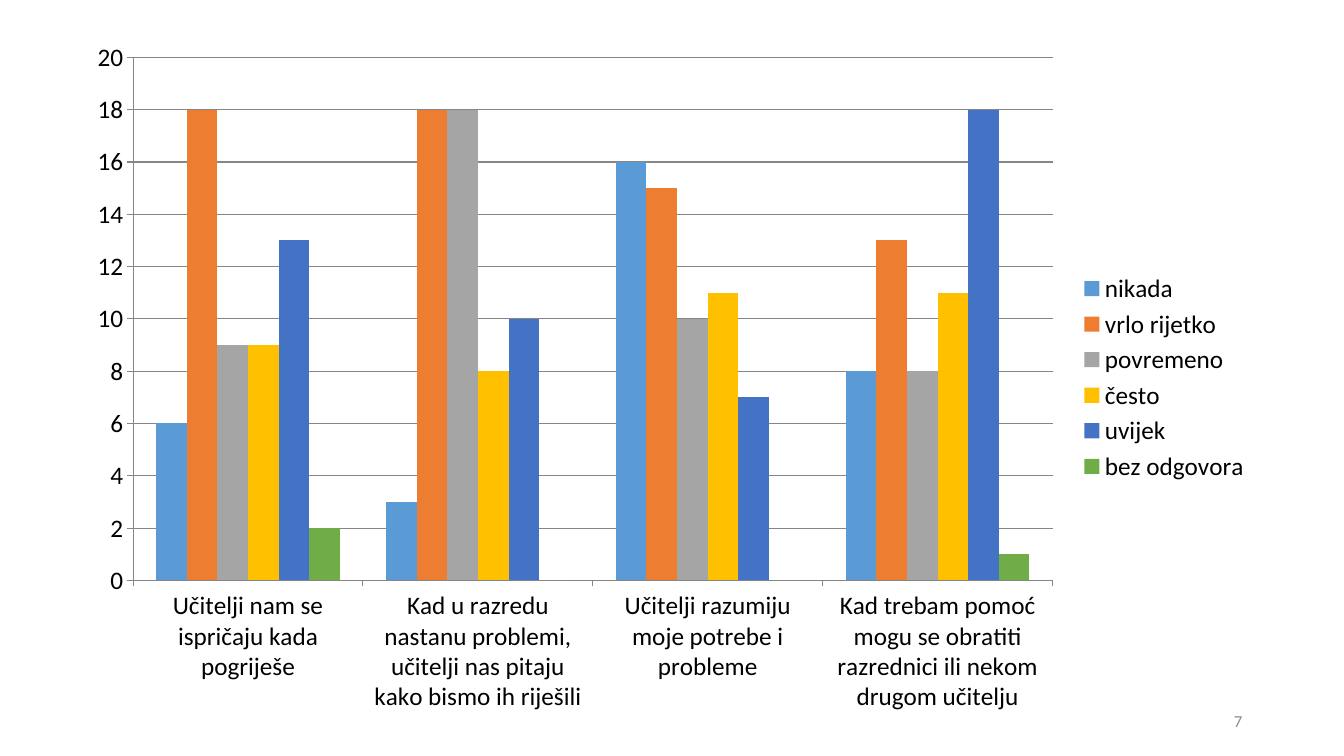
"""Build a slide with a clustered column chart of pupils' answers about their teachers."""
import pptx
import pptx.chart.data
import pptx.dml.color
import pptx.enum.chart
import pptx.enum.text
import pptx.oxml
import pptx.oxml.ns
import pptx.util

QUESTIONS = [
    "Učitelji nam se ispričaju kada pogriješe",
    "Kad u razredu nastanu problemi, učitelji nas pitaju kako bismo ih riješili",
    "Učitelji razumiju moje potrebe i probleme",
    "Kad trebam pomoć mogu se obratiti razrednici ili nekom drugom učitelju",
]
ANSWERS = [
    ("nikada", (6, 3, 16, 8), "5B9BD5"),
    ("vrlo rijetko", (18, 18, 15, 13), "ED7D31"),
    ("povremeno", (9, 18, 10, 8), "A5A5A5"),
    ("često", (9, 8, 11, 11), "FFC000"),
    ("uvijek", (13, 10, 7, 18), "4472C4"),
    ("bez odgovora", (2, 0, 0, 1), "70AD47"),
]
PAGE_NUMBER = "7"

THEME = {
    "font": "Calibri",
    "chart_size": 18,
    "number_size": 12,
    "text": "000000",
    "number": "8C8C8C",
    "line": "868686",
}
SLIDE_SIZE = (13.33, 7.5)
CHART_BOX = (0.74, 0.28, 11.76, 6.93)
PLOT_BOX = (1.32, 0.57, 9.12, 5.19)
NUMBER_BOX = (9.42, 6.95, 3, 0.4)


def inches(lengths):
    return [pptx.util.Inches(length) for length in lengths]


def color(name):
    return pptx.dml.color.RGBColor.from_string(name)


def apply(target, values):
    for name, value in values.items():
        setattr(target, name, value)


def style_font(font, size, text_color):
    apply(font, {"name": THEME["font"], "size": pptx.util.Pt(size)})
    font.color.rgb = color(text_color)


def style_line(line):
    line.color.rgb = color(THEME["line"])
    line.width = pptx.util.Pt(0.75)


def place_plot(chart):
    left, top, width, height = CHART_BOX
    plot_left, plot_top, plot_width, plot_height = PLOT_BOX
    shares = {
        "x": (plot_left - left) / width,
        "y": (plot_top - top) / height,
        "w": plot_width / width,
        "h": plot_height / height,
    }
    modes = "".join(f'<c:{axis}Mode val="edge"/>' for axis in "xy")
    sizes = "".join(f'<c:{side} val="{share:.4f}"/>' for side, share in shares.items())
    layout = pptx.oxml.parse_xml(
        f'<c:layout {pptx.oxml.ns.nsdecls("c")}><c:manualLayout>'
        f'<c:layoutTarget val="inner"/>{modes}{sizes}</c:manualLayout></c:layout>'
    )
    plot_area = chart.plots[0]._element.getparent()
    for previous in plot_area.findall(pptx.oxml.ns.qn("c:layout")):
        plot_area.remove(previous)
    plot_area.insert(0, layout)


def add_answer_chart(slide):
    data = pptx.chart.data.CategoryChartData()
    data.categories = QUESTIONS
    for name, values, _ in ANSWERS:
        data.add_series(name, values)
    chart = slide.shapes.add_chart(
        pptx.enum.chart.XL_CHART_TYPE.COLUMN_CLUSTERED, *inches(CHART_BOX), data
    ).chart
    apply(chart, {"has_title": False, "has_legend": True})
    style_font(chart.font, THEME["chart_size"], THEME["text"])
    apply(chart.legend, {
        "position": pptx.enum.chart.XL_LEGEND_POSITION.RIGHT,
        "include_in_layout": False,
    })
    apply(chart.plots[0], {"gap_width": 150, "overlap": 0, "vary_by_categories": False})
    for series, (_, _, fill_color) in zip(chart.plots[0].series, ANSWERS):
        series.format.fill.solid()
        series.format.fill.fore_color.rgb = color(fill_color)
    for axis in (chart.category_axis, chart.value_axis):
        axis.major_tick_mark = pptx.enum.chart.XL_TICK_MARK.OUTSIDE
        style_line(axis.format.line)
    apply(chart.value_axis, {
        "minimum_scale": 0, "maximum_scale": 20, "major_unit": 2,
        "has_major_gridlines": True,
    })
    style_line(chart.value_axis.major_gridlines.format.line)
    place_plot(chart)


def add_page_number(slide):
    frame = slide.shapes.add_textbox(*inches(NUMBER_BOX)).text_frame
    apply(frame, {
        "word_wrap": True,
        "vertical_anchor": pptx.enum.text.MSO_ANCHOR.MIDDLE,
        "text": PAGE_NUMBER,
    })
    paragraph = frame.paragraphs[0]
    paragraph.alignment = pptx.enum.text.PP_ALIGN.RIGHT
    style_font(paragraph.runs[0].font, THEME["number_size"], THEME["number"])


def main():
    presentation = pptx.Presentation()
    presentation.slide_width, presentation.slide_height = inches(SLIDE_SIZE)
    slide = presentation.slides.add_slide(presentation.slide_layouts[6])
    add_answer_chart(slide)
    add_page_number(slide)
    presentation.save("out.pptx")


if __name__ == "__main__":
    main()
